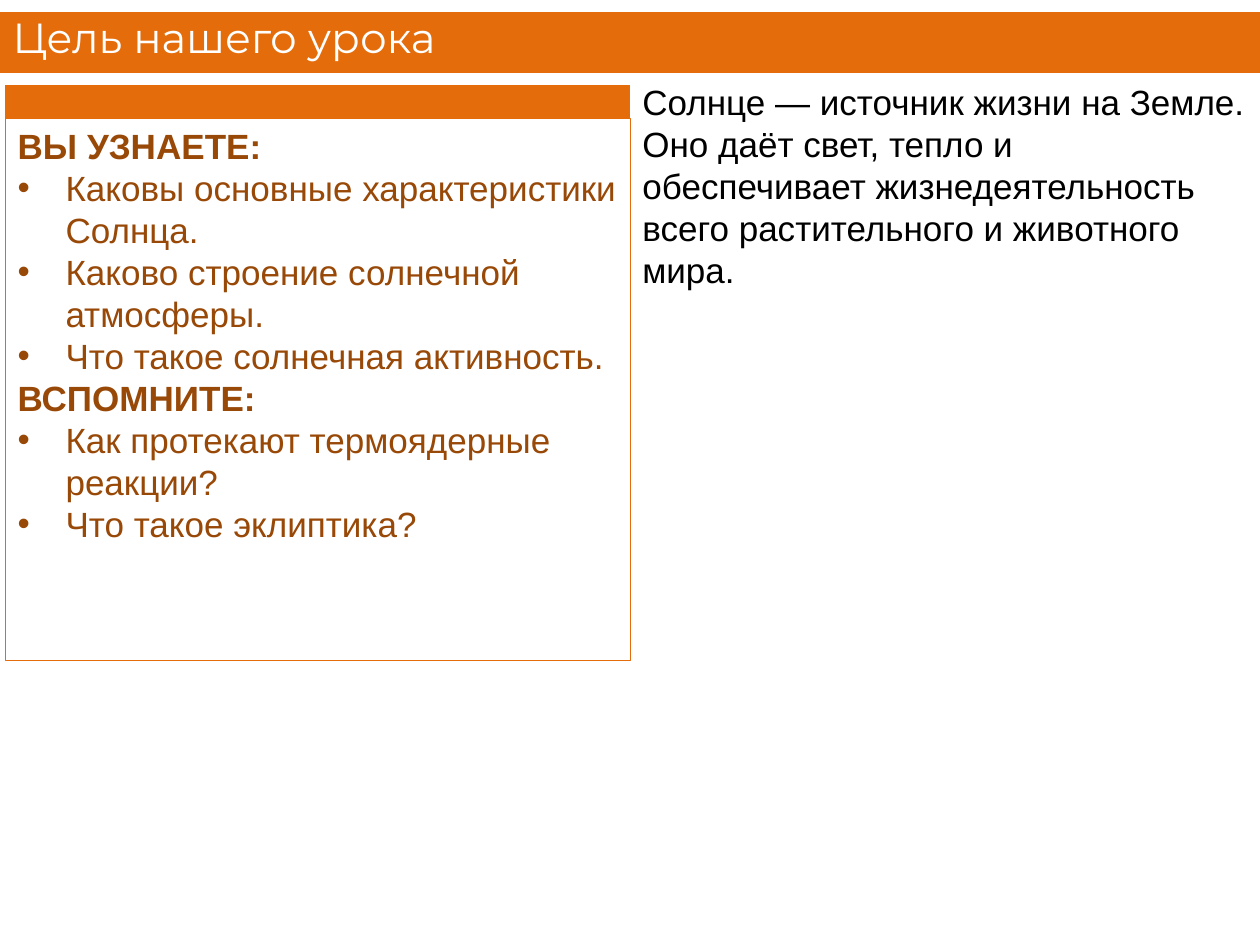
from lxml.etree import SubElement
from pptx import Presentation
from pptx.dml.color import RGBColor
from pptx.enum.shapes import MSO_CONNECTOR, MSO_SHAPE
from pptx.enum.text import MSO_ANCHOR, MSO_AUTO_SIZE, PP_ALIGN
from pptx.oxml.ns import qn
from pptx.util import Inches, Pt

TITLE = "Цель нашего урока"
SECTIONS = [
    ("ВЫ УЗНАЕТЕ:", [
        "Каковы основные характеристики Солнца.",
        "Каково строение солнечной атмосферы.",
        "Что такое солнечная активность.",
    ]),
    ("ВСПОМНИТЕ:", [
        "Как протекают термоядерные реакции?",
        "Что такое эклиптика?",
    ]),
]
SUN_FACTS = [
    "Солнце — источник жизни на Земле. Оно даёт свет, тепло и",
    "обеспечивает жизнедеятельность всего растительного и животного мира.",
]

THEME = {
    "orange": RGBColor.from_string("E46C0A"),
    "brown": RGBColor.from_string("984807"),
    "white": RGBColor.from_string("FFFFFF"),
    "black": RGBColor.from_string("000000"),
    "title_font": "Montserrat",
    "body_font": "Arial",
    "title_size": Pt(24),
    "body_size": Pt(20),
}
WIDTH, HEIGHT = 10, 7.5
BAR_TOP, BAR_BOTTOM = 0.08, 0.59
PANEL_LEFT, PANEL_WIDTH = 0.04, 4.96
BULLET_INDENT = 0.38


def place(shape, *position):
    shape.left, shape.top, shape.width, shape.height = map(Inches, position)


def paint(shape, fill, outline=None):
    shape.fill.solid()
    shape.fill.fore_color.rgb = fill
    if outline is None:
        shape.line.fill.background()
    else:
        shape.line.color.rgb = outline
        shape.line.width = Pt(0.5)


def add_rectangle(shapes, position, fill, outline=None):
    rectangle = shapes.add_shape(MSO_SHAPE.RECTANGLE, *map(Inches, position))
    rectangle.shadow.inherit = False
    paint(rectangle, fill, outline)
    return rectangle


def add_rule(shapes, y):
    rule = shapes.add_connector(
        MSO_CONNECTOR.STRAIGHT, 0, Inches(y), Inches(WIDTH), Inches(y))
    rule.line.color.rgb = THEME["white"]
    rule.line.width = Pt(2)
    SubElement(rule.element.spPr, qn("a:effectLst"))


def add_span(para, text, role, color, bold=False):
    """Add a run in the theme's "title" or "body" type."""
    span = para.add_run()
    span.text = text
    span.font.name = THEME[role + "_font"]
    span.font.size = THEME[role + "_size"]
    span.font.color.rgb = THEME[color]
    span.font.bold = bold


def set_bullet(para, bulleted):
    properties = para._p.get_or_add_pPr()
    indent = Inches(BULLET_INDENT) if bulleted else 0
    properties.set("marL", str(indent))
    properties.set("indent", str(-indent))
    if bulleted:
        SubElement(properties, qn("a:buFont"), typeface=THEME["body_font"])
        SubElement(properties, qn("a:buChar"), char="•")
    else:
        SubElement(properties, qn("a:buNone"))


def next_para(frame, index):
    return frame.paragraphs[0] if index == 0 else frame.add_paragraph()


def add_title(page):
    band = page.shapes.add_group_shape()
    add_rectangle(band.shapes, (0, BAR_TOP, WIDTH, BAR_BOTTOM - BAR_TOP), THEME["orange"])
    for y in (BAR_BOTTOM, BAR_TOP):
        add_rule(band.shapes, y)
    title = page.shapes.title
    place(title, 0, -0.04, WIDTH, 0.67)
    band.element.addnext(title.element)
    frame = title.text_frame
    frame.auto_size = MSO_AUTO_SIZE.NONE
    frame.vertical_anchor = MSO_ANCHOR.MIDDLE
    para = frame.paragraphs[0]
    para.alignment = PP_ALIGN.LEFT
    add_span(para, TITLE, "title", "white")


def add_facts(page):
    box = page.shapes.add_textbox(*map(Inches, (5, BAR_BOTTOM, 5, 1.78)))
    frame = box.text_frame
    frame.word_wrap = True
    frame.auto_size = MSO_AUTO_SIZE.SHAPE_TO_FIT_TEXT
    for index, fact in enumerate(SUN_FACTS):
        add_span(next_para(frame, index), fact, "body", "black")


def add_goals(page):
    header = add_rectangle(
        page.shapes, (PANEL_LEFT, 0.68, PANEL_WIDTH, 0.39), THEME["orange"], THEME["orange"])
    panel = page.placeholders[1]
    place(panel, PANEL_LEFT, 0.94, PANEL_WIDTH, 4.3)
    paint(panel, THEME["white"], THEME["orange"])
    header.element.addnext(panel.element)
    frame = panel.text_frame
    frame.auto_size = MSO_AUTO_SIZE.NONE
    frame.vertical_anchor = MSO_ANCHOR.TOP
    lines = []
    for heading, items in SECTIONS:
        lines.append((heading, True))
        lines += [(item, False) for item in items]
    for index, (text, is_heading) in enumerate(lines):
        para = next_para(frame, index)
        set_bullet(para, not is_heading)
        para.space_before = Pt(0)
        add_span(para, text, "body", "brown", bold=is_heading)


def main():
    deck = Presentation()
    deck.slide_width, deck.slide_height = Inches(WIDTH), Inches(HEIGHT)
    page = deck.slides.add_slide(deck.slide_layouts[1])
    add_title(page)
    add_facts(page)
    add_goals(page)
    deck.save("out.pptx")


if __name__ == "__main__":
    main()
